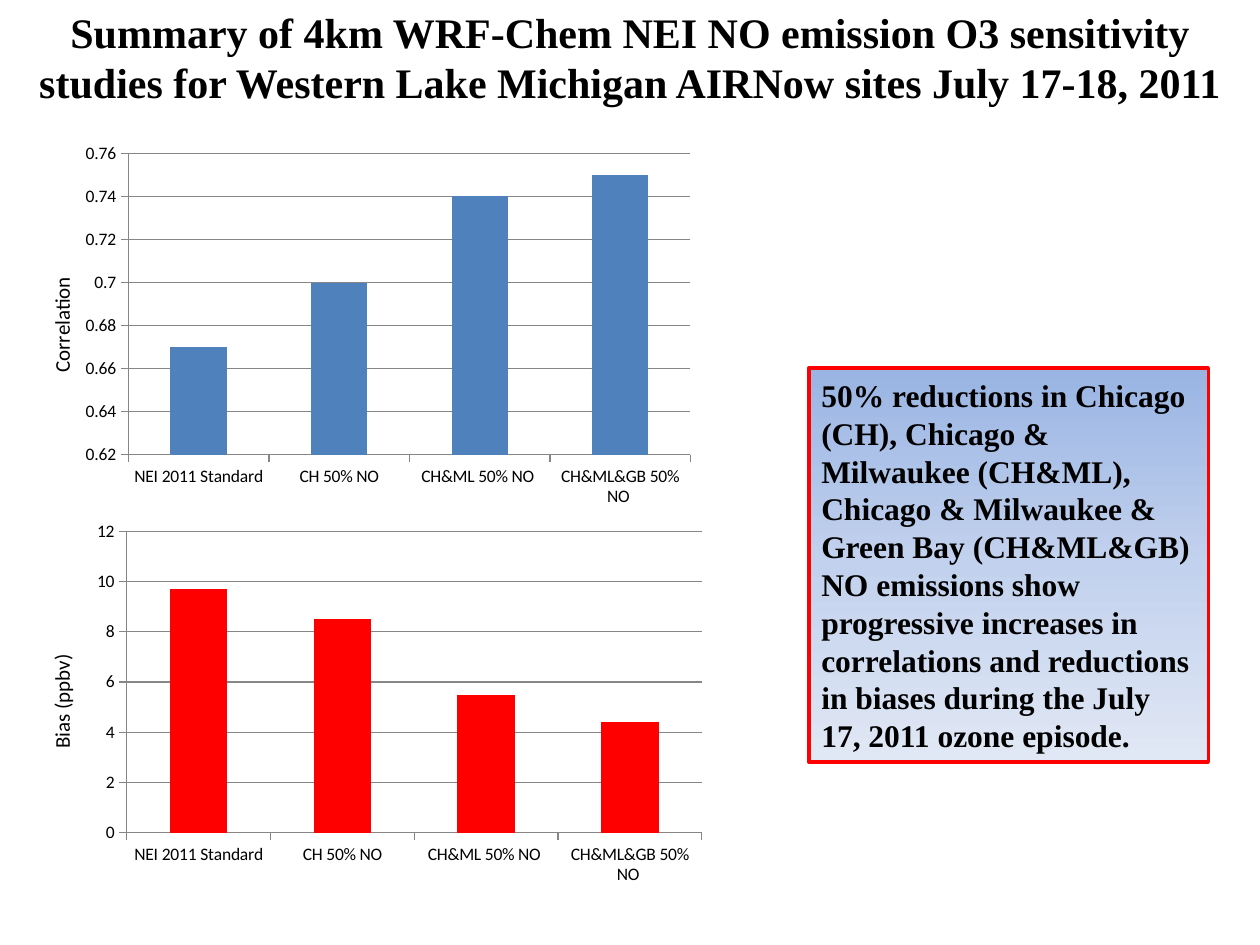
from copy import deepcopy

from pptx import Presentation
from pptx.chart.data import CategoryChartData
from pptx.dml.color import RGBColor
from pptx.enum.chart import XL_CHART_TYPE, XL_TICK_MARK
from pptx.enum.shapes import MSO_SHAPE
from pptx.enum.text import MSO_ANCHOR, MSO_AUTO_SIZE, PP_ALIGN
from pptx.util import Inches, Pt

COLUMN = XL_CHART_TYPE.COLUMN_CLUSTERED
OUTSIDE, NO_TICK = XL_TICK_MARK.OUTSIDE, XL_TICK_MARK.NONE
RECT = MSO_SHAPE.RECTANGLE
LEFT, CENTER = PP_ALIGN.LEFT, PP_ALIGN.CENTER
TOP, MIDDLE = MSO_ANCHOR.TOP, MSO_ANCHOR.MIDDLE
FIT_SHAPE, NO_FIT = MSO_AUTO_SIZE.SHAPE_TO_FIT_TEXT, MSO_AUTO_SIZE.NONE

SERIF, SANS = "Times New Roman", "Calibri"
BLACK, GRAY, BLUE, RED = "000000", "868686", "4F81BD", "FF0000"
SLIDE_W, SLIDE_H = 10, 7.5

# Two chart rows of equal height
CHART_TOP, CHART_W, CHART_H = 1.08, 5, 3
LABEL_X, LABEL_H = 0.49, 0.3

CATEGORIES = ["NEI 2011 Standard", "CH 50% NO", "CH&ML 50% NO ",
              "CH&ML&GB 50% NO "]
# axis label, label width, label centre y, chart left, values, colour, axis range
CHARTS = [
    ("Correlation", 0.97, 2.57, 0.58, (0.67, 0.7, 0.74, 0.75), BLUE,
     (0.62, 0.76, 0.02)),
    ("Bias (ppbv)", 0.96, 5.56, 0.67, (9.7, 8.5, 5.5, 4.4), RED, (0, 12, 2)),
]
TITLE = ("Summary of 4km WRF-Chem NEI NO emission O3 sensitivity studies for "
         "Western Lake Michigan AIRNow sites July 17-18, 2011")
FINDING = ("50% reductions in Chicago (CH), Chicago & Milwaukee (CH&ML), "
           "Chicago & Milwaukee & Green Bay (CH&ML&GB) NO emissions show "
           "progressive increases in correlations and reductions in biases "
           "during the July 17, 2011 ozone episode.")


def rgb(color):
    return RGBColor.from_string(color)


def box(left, top, width, height):
    return [Inches(v) for v in (left, top, width, height)]


def set_font(font, name, size, bold=False):
    font.name, font.size, font.bold = name, Pt(size), bold
    font.color.rgb = rgb(BLACK)


def set_text(sp, text, name, size, bold=False, align=LEFT, anchor=TOP,
             wrap=True, fit=FIT_SHAPE):
    tf = sp.text_frame
    tf.text = text
    tf.word_wrap, tf.auto_size, tf.vertical_anchor = wrap, fit, anchor
    p = tf.paragraphs[0]
    p.alignment = align
    set_font(p.runs[0].font, name, size, bold)


def add_title(s):
    sp = s.shapes.title
    sp.left, sp.top, sp.width, sp.height = box(0, 0, SLIDE_W, 0.91)
    set_text(sp, TITLE, SERIF, 24, True, CENTER, TOP, fit=NO_FIT)


def add_column_chart(s, left, top, values, color, axis_range):
    data = CategoryChartData()
    data.categories = CATEGORIES
    data.add_series("Series 1", values)
    chart = s.shapes.add_chart(
        COLUMN, *box(left, top, CHART_W, CHART_H), data).chart
    chart.has_legend = chart.has_title = False
    set_font(chart.font, SANS, 10)

    # Columns
    plot = chart.plots[0]
    plot.gap_width, plot.vary_by_categories = 150, False
    fill = plot.series[0].format.fill
    fill.solid()
    fill.fore_color.rgb = rgb(color)

    # Axes and gridlines
    val = chart.value_axis
    val.minimum_scale, val.maximum_scale, val.major_unit = axis_range
    val.has_major_gridlines = True
    for axis in (chart.category_axis, val):
        axis.major_tick_mark, axis.minor_tick_mark = OUTSIDE, NO_TICK
    for part in (chart.category_axis, val, val.major_gridlines):
        part.format.line.color.rgb = rgb(GRAY)
        part.format.line.width = Pt(0.75)


def add_axis_label(s, text, width, center_y):
    sp = s.shapes.add_textbox(*box(LABEL_X - width / 2, center_y - LABEL_H / 2,
                                   width, LABEL_H))
    sp.rotation = 270
    set_text(sp, text, SANS, 12, wrap=False)


def add_gradient(sp, colors):
    fill = sp.fill
    fill.gradient()
    fill.gradient_angle = 270
    # The default gradient has two stops: copy one for the middle
    gs_list = sp._element.spPr.find(".//{*}gsLst")
    gs_list.insert(1, deepcopy(gs_list[0]))
    for i, (stop, color) in enumerate(zip(fill.gradient_stops, colors)):
        stop.position = i / (len(colors) - 1)
        stop.color.rgb = rgb(color)


def add_finding(s):
    sp = s.shapes.add_shape(RECT, *box(6.42, 2.92, 3.17, 3.13))
    sp.shadow.inherit = False
    add_gradient(sp, ["9AB5E4", "C2D1ED", "E1E8F5"])
    sp.line.color.rgb = rgb(RED)
    sp.line.width = Pt(2)
    set_text(sp, FINDING, SERIF, 18, True, anchor=MIDDLE)


def main():
    prs = Presentation()
    prs.slide_width, prs.slide_height = Inches(SLIDE_W), Inches(SLIDE_H)
    s = prs.slides.add_slide(prs.slide_layouts[5])
    add_title(s)
    for row, (label, width, center_y, left, *chart) in enumerate(CHARTS):
        add_column_chart(s, left, CHART_TOP + row * CHART_H, *chart)
        add_axis_label(s, label, width, center_y)
    add_finding(s)
    prs.save("out.pptx")


if __name__ == "__main__":
    main()
